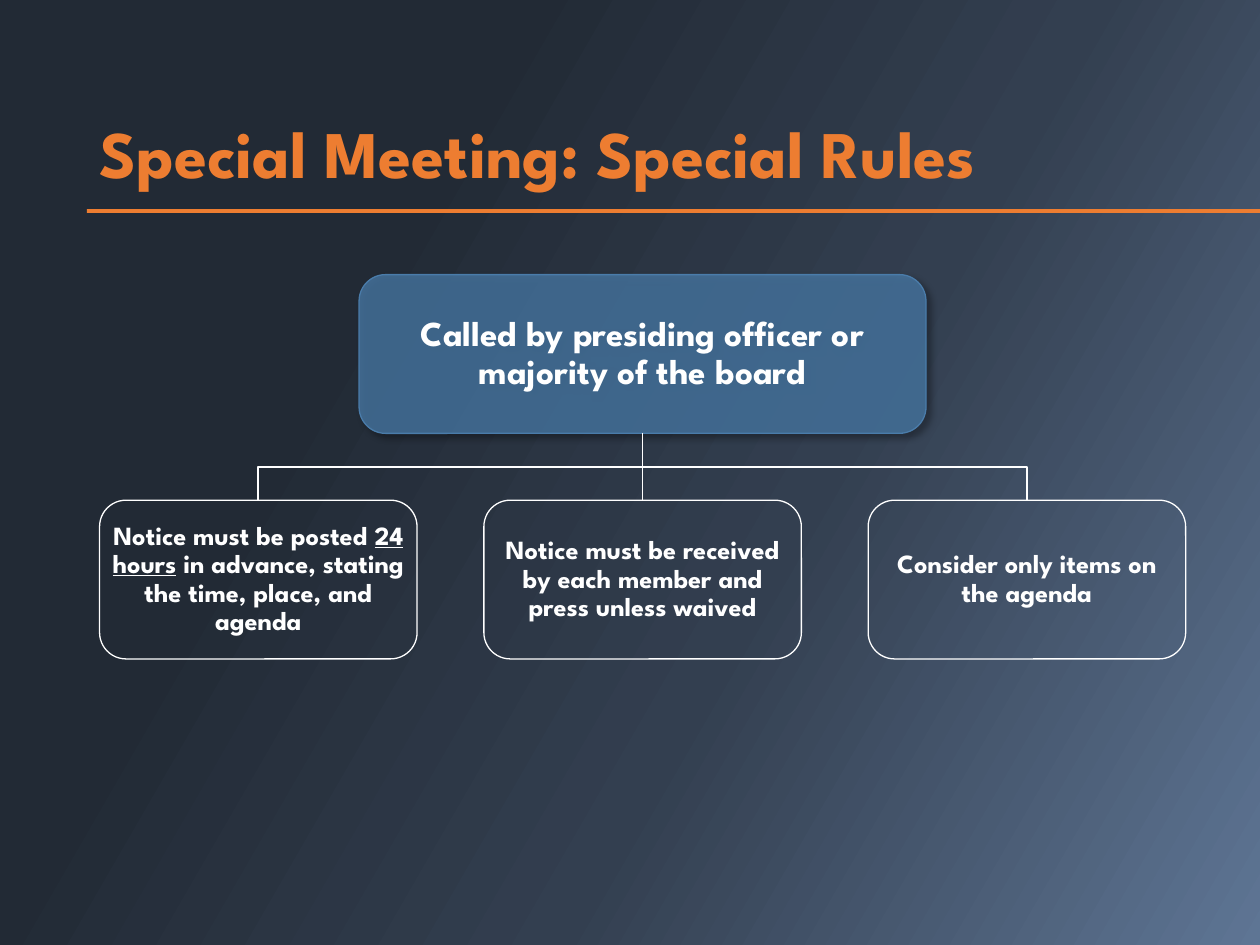
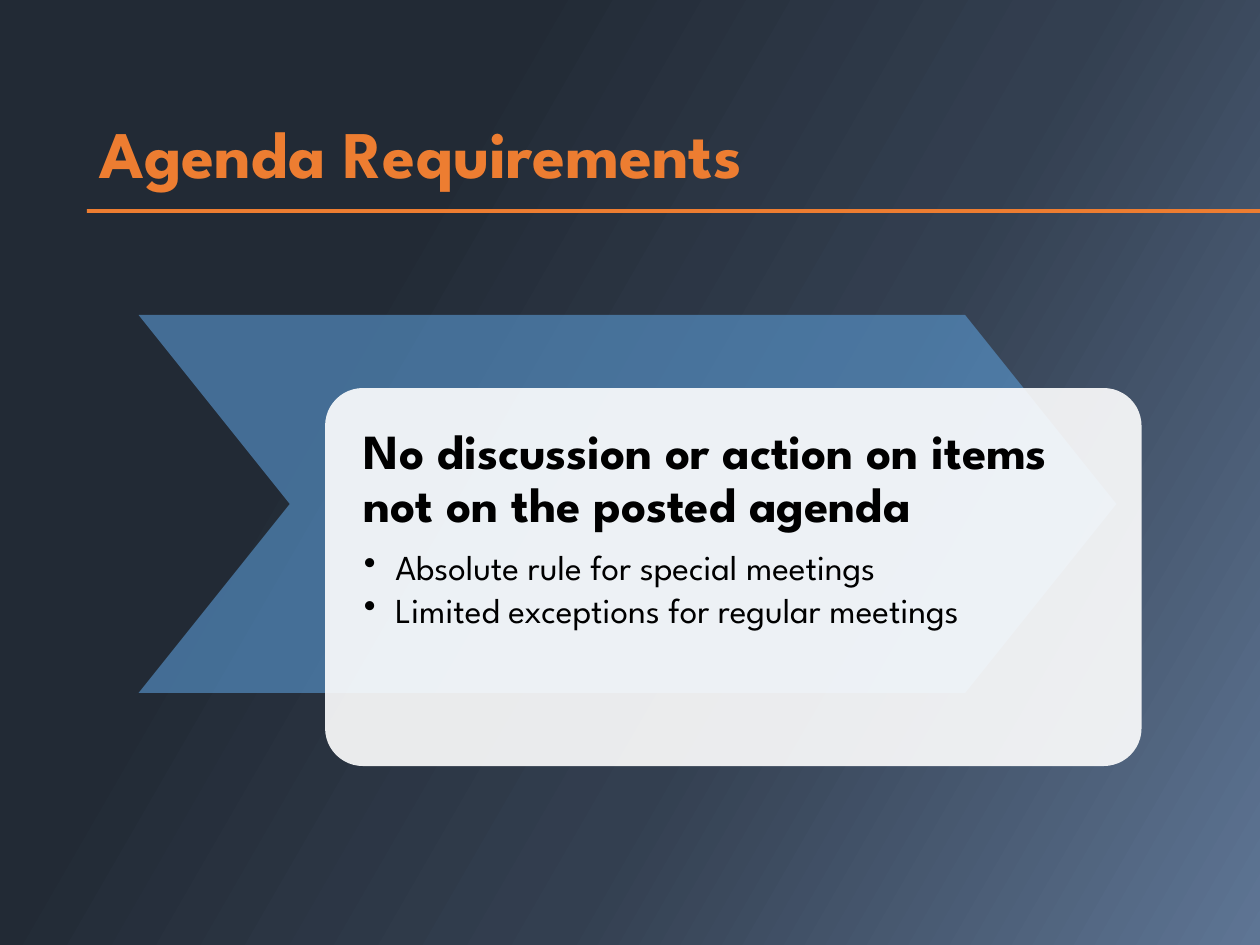
"""Build two slides on rules for special meetings and agendas."""
from dataclasses import dataclass

from lxml import etree
from pptx import Presentation
from pptx.dml.color import RGBColor
from pptx.enum.shapes import MSO_CONNECTOR, MSO_SHAPE
from pptx.enum.text import MSO_ANCHOR, PP_ALIGN
from pptx.oxml.ns import qn
from pptx.util import Inches, Pt

ROUND, RECT, CHEVRON = MSO_SHAPE.ROUNDED_RECTANGLE, MSO_SHAPE.RECTANGLE, MSO_SHAPE.CHEVRON
STRAIGHT = MSO_CONNECTOR.STRAIGHT
TOP, MIDDLE, BOTTOM = MSO_ANCHOR.TOP, MSO_ANCHOR.MIDDLE, MSO_ANCHOR.BOTTOM
LEFT, CENTER = PP_ALIGN.LEFT, PP_ALIGN.CENTER


@dataclass(frozen=True)
class Theme:
    """Colours, font and type sizes of the deck."""
    accent: str = "ED7D31"
    steel: str = "4A7CAA"
    sky: str = "5B9BD5"
    white: str = "FFFFFF"
    black: str = "000000"
    fade: tuple = ((0, "222A35"), (29, "222A35"), (61, "333F50"), (100, "5E7594"))
    font: str = "League Spartan"
    title: int = 38
    lead: int = 28
    body: int = 20
    note: int = 15


@dataclass(frozen=True)
class Box:
    """A preset shape with its place in inches and its look."""
    left: float
    top: float
    width: float
    height: float
    kind: int = ROUND
    fill: str = ""
    alpha: int = 100
    line: str = ""
    adjust: float | None = None
    shade: bool = False


THEME = Theme()
BAND = Box(0.69, 1.66, 9.31, 0.03, RECT, THEME.accent)
ROOT = Box(2.85, 2.18, 4.5, 1.26, fill=THEME.steel, alpha=75, line=THEME.steel, shade=True)
RULES = (
    "Notice must be posted _24 hours_ in advance, stating the time, place, and agenda",
    "Notice must be received by each member and press unless waived",
    "Consider only items on the agenda",
)
RULE_LEFT, RULE_STEP, RULE_TOP, RULE_WIDTH = 0.79, 3.05, 3.97, 2.52
ARROW = Box(1.1, 2.5, 7.76, 3, CHEVRON, THEME.sky, 60, adjust=0.4)
CARD = Box(2.58, 3.08, 6.48, 3, fill=THEME.white, alpha=90, adjust=0.1)
POINTS = ("Absolute rule for special meetings", "Limited exceptions for regular meetings")


def draw(slide, box: Box):
    """Draw a box and return its shape."""
    shape = slide.shapes.add_shape(
        box.kind, *map(Inches, (box.left, box.top, box.width, box.height)))
    shape.shadow.inherit = False
    if box.adjust is not None:
        shape.adjustments[0] = box.adjust
    if box.fill:
        shape.fill.solid()
        shape.fill.fore_color.rgb = RGBColor.from_string(box.fill)
        if box.alpha < 100:
            color = shape.element.spPr.find(qn("a:solidFill"))[0]
            etree.SubElement(color, qn("a:alpha"), val=str(box.alpha * 1000))
    else:
        shape.fill.background()
    if box.line:
        shape.line.color.rgb = RGBColor.from_string(box.line)
        shape.line.width = Pt(0.75)
    else:
        shape.line.fill.background()
    if box.shade:
        effects = shape.element.spPr.find(qn("a:effectLst"))
        cast = etree.SubElement(effects, qn("a:outerShdw"), blurRad=str(Pt(4)),
                                dist=str(Pt(3)), dir="2700000", algn="tl", rotWithShape="0")
        color = etree.SubElement(cast, qn("a:srgbClr"), val=THEME.black)
        etree.SubElement(color, qn("a:alpha"), val="40000")
    return shape


def frame(shape, anchor: int, side: float, edge: float):
    """Set wrapping, anchor and margins, and return the text frame."""
    text = shape.text_frame
    text.word_wrap = True
    text.vertical_anchor = anchor
    text.margin_left = text.margin_right = Inches(side)
    text.margin_top = text.margin_bottom = Inches(edge)
    return text


def write(para, text: str, *, size: int, color: str, bold: bool = True,
          align: int = LEFT, after: float = 0, bullet: bool = False) -> None:
    """Fill a paragraph, with underlined words set between underscores."""
    if bullet:
        props = para._p.get_or_add_pPr()
        props.set("marL", str(Inches(0.25)))
        props.set("indent", str(Inches(-0.25)))
        etree.SubElement(props, qn("a:buChar"), char="•")
    para.alignment = align
    para.line_spacing = 0.9
    para.space_after = Pt(after)
    for index, part in enumerate(text.split("_")):
        run = para.add_run()
        run.text = part
        font = run.font
        font.name, font.size, font.bold = THEME.font, Pt(size), bold
        font.color.rgb = RGBColor.from_string(color)
        if index % 2:
            font.underline = True


def start(deck, title: str):
    """Add a slide with the shared backdrop, band and title."""
    slide = deck.slides.add_slide(deck.slide_layouts[6])
    fill = slide.background.fill
    fill.gradient()
    fill.gradient_angle = 330
    stops = next(slide.element.iter(qn("a:gsLst")))
    for stop in list(stops):
        stops.remove(stop)
    for place, color in THEME.fade:
        stop = etree.SubElement(stops, qn("a:gs"), pos=str(place * 1000))
        etree.SubElement(stop, qn("a:srgbClr"), val=color)
    draw(slide, BAND)
    head = slide.shapes.add_textbox(*map(Inches, (0.69, 0.4, 8.62, 1.18)))
    write(frame(head, BOTTOM, 0.1, 0.05).paragraphs[0], title,
          size=THEME.title, color=THEME.accent)
    return slide


def label(shape, text: str, size: int) -> None:
    """Centre white text in a chart box."""
    write(frame(shape, MIDDLE, 0.01, 0.01).paragraphs[0], text,
          size=size, color=THEME.white, align=CENTER)


def link(slide, root, leaf) -> None:
    """Join the root to a leaf, with a bend where they are not aligned."""
    x, y = root.left + root.width // 2, root.top + root.height
    end = leaf.left + leaf.width // 2
    if abs(end - x) < Inches(0.01):
        wire = slide.shapes.add_connector(STRAIGHT, x, y, end, leaf.top)
        wire.begin_connect(root, 2)
        wire.end_connect(leaf, 0)
        etree.SubElement(wire.element.spPr, qn("a:effectLst"))
    else:
        bend = (y + leaf.top) // 2
        path = slide.shapes.build_freeform(x, y)
        path.add_line_segments(((x, bend), (end, bend), (end, leaf.top)), close=False)
        wire = path.convert_to_shape()
        wire.fill.background()
        wire.shadow.inherit = False
    wire.line.color.rgb = RGBColor.from_string(THEME.white)
    wire.line.width = Pt(1)


def special(deck) -> None:
    """Build the chart of special meeting rules."""
    slide = start(deck, "Special Meeting: Special Rules")
    root = draw(slide, ROOT)
    label(root, "Called by presiding officer or majority of the board", THEME.body)
    for index, rule in enumerate(RULES):
        leaf = draw(slide, Box(RULE_LEFT + index * RULE_STEP, RULE_TOP,
                               RULE_WIDTH, ROOT.height, line=THEME.white))
        label(leaf, rule, THEME.note)
        link(slide, root, leaf)


def agenda(deck) -> None:
    """Build the card of agenda requirements."""
    slide = start(deck, "Agenda Requirements")
    draw(slide, ARROW)
    text = frame(draw(slide, CARD), TOP, 0.22, 0.22)
    write(text.paragraphs[0], "No discussion or action on items not on the posted agenda",
          size=THEME.lead, color=THEME.black, after=10)
    for point in POINTS:
        write(text.add_paragraph(), point, size=THEME.body, color=THEME.black,
              bold=False, after=3, bullet=True)


def main() -> None:
    """Build and save the deck."""
    deck = Presentation()
    deck.slide_width, deck.slide_height = Inches(10), Inches(7.5)
    special(deck)
    agenda(deck)
    deck.save("out.pptx")


if __name__ == "__main__":
    main()
